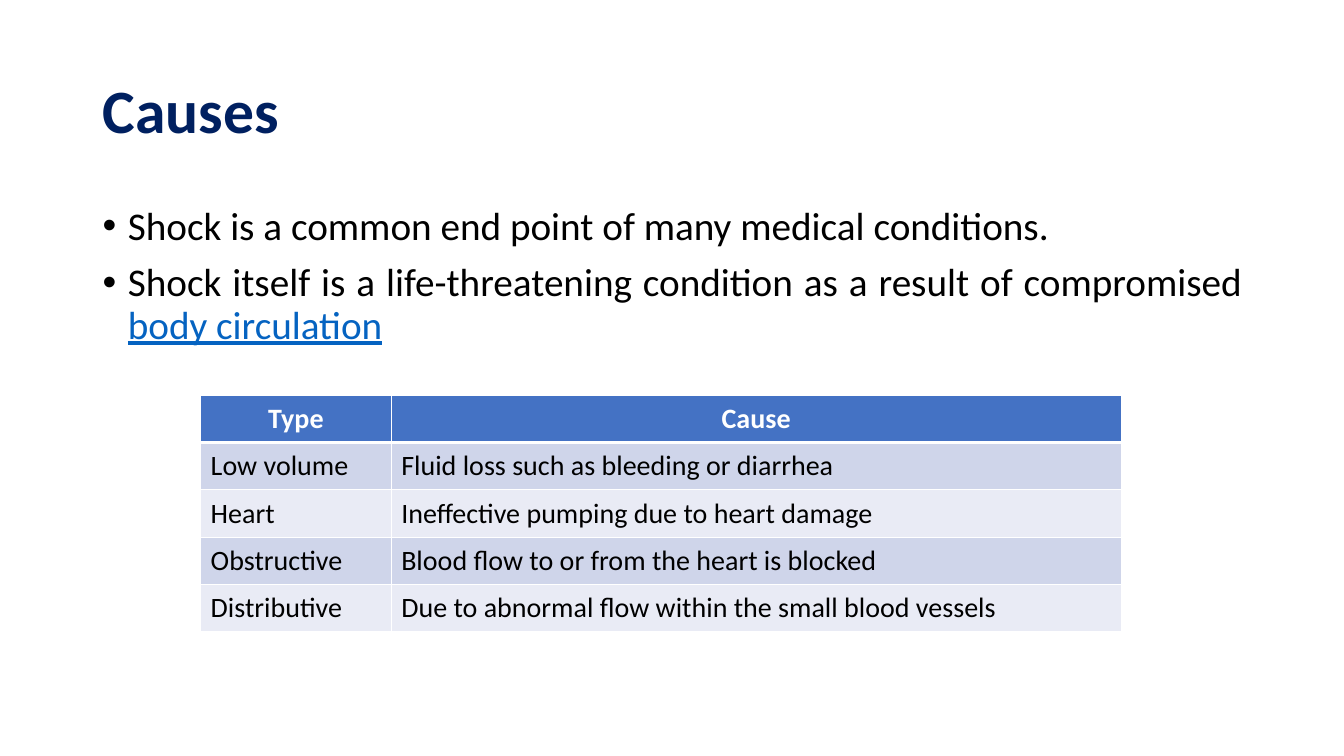
import pptx
import pptx.util
import pptx.dml.color
import pptx.enum.text
from lxml import etree
from pptx.oxml.ns import qn

Inches, Pt = pptx.util.Inches, pptx.util.Pt
RGBColor = pptx.dml.color.RGBColor
PP_ALIGN = pptx.enum.text.PP_ALIGN
MSO_ANCHOR = pptx.enum.text.MSO_ANCHOR

# Content
TITLE = "Causes"
BULLETS = [
    ["Shock is a common end point of many medical conditions."],
    ["Shock itself is a life-threatening condition as a result of compromised ",
     "body circulation"],
]
ROWS = [
    ("Type", "Cause"),
    ("Low volume", "Fluid loss such as bleeding or diarrhea"),
    ("Heart", "Ineffective pumping due to heart damage"),
    ("Obstructive", "Blood flow to or from the heart is blocked"),
    ("Distributive", "Due to abnormal flow within the small blood vessels"),
]
COL_WIDTHS = [1.89, 7.24]
ROW_HEIGHT = 0.47

FONT = "Calibri"
NAVY = RGBColor(0x00, 0x20, 0x60)
BLACK = RGBColor(0x00, 0x00, 0x00)
WHITE = RGBColor(0xFF, 0xFF, 0xFF)
LINK_BLUE = RGBColor(0x05, 0x63, 0xC1)
HEADER_BLUE = RGBColor(0x44, 0x72, 0xC4)
BANDS = [RGBColor(0xE9, 0xEB, 0xF5), RGBColor(0xCF, 0xD5, 0xEA)]


def style(r, size, color, bold=False):
    r.font.name = FONT
    r.font.size = Pt(size)
    r.font.color.rgb = color
    r.font.bold = bold


def add_text_frame(s, left, top, width, height, anchor):
    box = s.shapes.add_textbox(Inches(left), Inches(top), Inches(width), Inches(height))
    tf = box.text_frame
    tf.word_wrap = True
    tf.vertical_anchor = anchor
    return tf


def add_bullet(p):
    pPr = p._p.get_or_add_pPr()
    pPr.set("marL", str(Inches(0.25)))
    pPr.set("indent", str(-Inches(0.25)))
    etree.SubElement(pPr, qn("a:buFont"), typeface="Arial")
    etree.SubElement(pPr, qn("a:buChar"), char="•")


def set_borders(cell, top, bottom):
    tcPr = cell._tc.get_or_add_tcPr()
    sides = [("a:lnL", 1), ("a:lnR", 1), ("a:lnT", top), ("a:lnB", bottom)]
    for i, (tag, width) in enumerate(sides):
        ln = etree.Element(qn(tag), w=str(Pt(width)))
        fill = etree.SubElement(ln, qn("a:solidFill"))
        etree.SubElement(fill, qn("a:srgbClr"), val=str(WHITE))
        tcPr.insert(i, ln)


prs = pptx.Presentation()
prs.slide_width, prs.slide_height = Inches(13.33), Inches(7.5)
s = prs.slides.add_slide(prs.slide_layouts[6])

# Title
tf = add_text_frame(s, 0.92, 0.4, 11.5, 1.45, MSO_ANCHOR.MIDDLE)
tf.text = TITLE
tf.paragraphs[0].line_spacing = 0.9
style(tf.paragraphs[0].runs[0], 44, NAVY, bold=True)

# Bullets
tf = add_text_frame(s, 0.92, 2, 11.5, 4.76, MSO_ANCHOR.TOP)
for i, parts in enumerate(BULLETS):
    p = tf.add_paragraph() if i else tf.paragraphs[0]
    p.alignment = PP_ALIGN.JUSTIFY
    p.line_spacing = 0.9
    p.space_before = Pt(10)
    add_bullet(p)
    for j, text in enumerate(parts):
        r = p.add_run()
        r.text = text
        style(r, 28, LINK_BLUE if j else BLACK)
        if j:
            r.font.underline = True

# Table of causes
table = s.shapes.add_table(
    len(ROWS), len(COL_WIDTHS), Inches(1.99), Inches(3.92),
    Inches(sum(COL_WIDTHS)), Inches(ROW_HEIGHT * len(ROWS))).table
for column, width in zip(table.columns, COL_WIDTHS):
    column.width = Inches(width)
for i, row in enumerate(ROWS):
    table.rows[i].height = Inches(ROW_HEIGHT)
    header = i == 0
    for j, text in enumerate(row):
        cell = table.cell(i, j)
        cell.text = text
        cell.vertical_anchor = MSO_ANCHOR.MIDDLE
        cell.fill.solid()
        cell.fill.fore_color.rgb = HEADER_BLUE if header else BANDS[i % 2]
        set_borders(cell, top=3 if i == 1 else 1, bottom=3 if header else 1)
        p = cell.text_frame.paragraphs[0]
        p.alignment = PP_ALIGN.CENTER if header else PP_ALIGN.LEFT
        style(p.runs[0], 20, WHITE if header else BLACK, bold=header)

prs.save("out.pptx")
